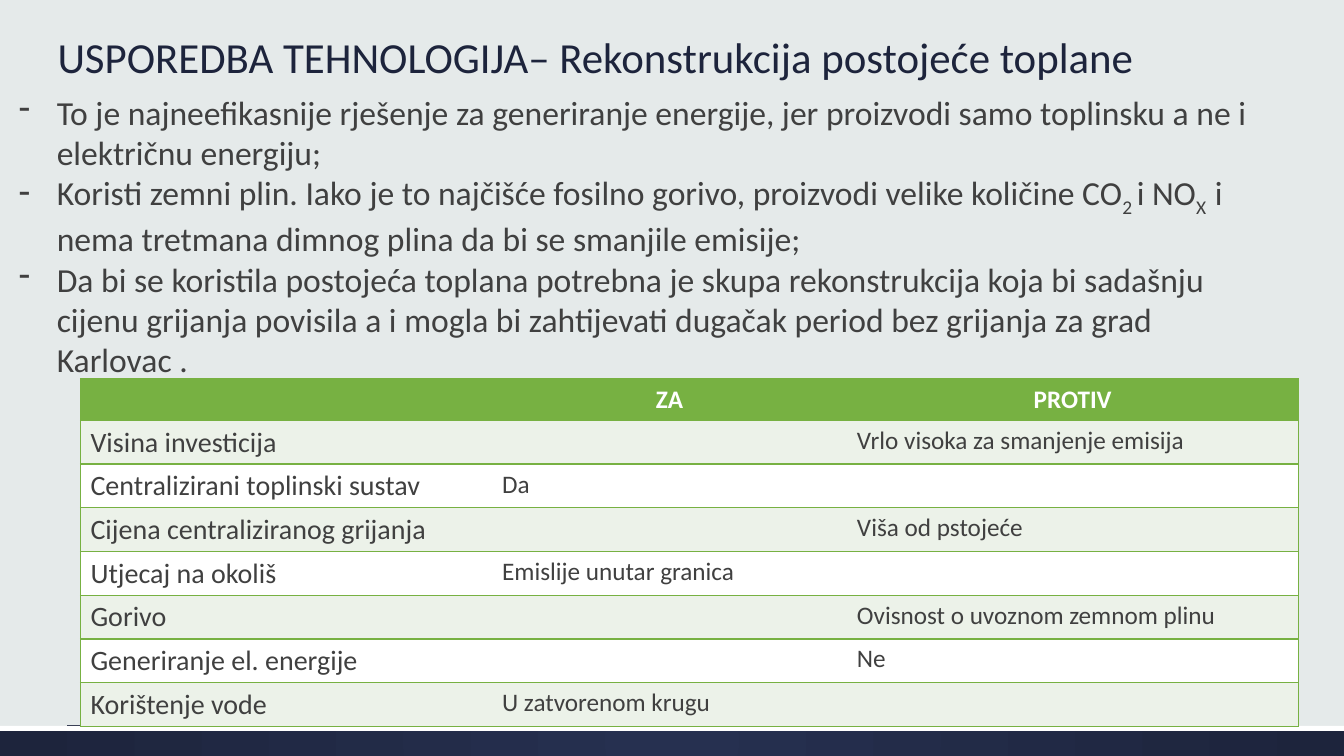
"""Build the slide on rebuilding the existing heating plant."""
from typing import NamedTuple

from lxml.etree import SubElement
from pptx import Presentation
from pptx.dml.color import RGBColor
from pptx.enum.shapes import MSO_SHAPE as Preset
from pptx.enum.text import MSO_ANCHOR as Anchor, PP_ALIGN as Align
from pptx.oxml.ns import qn
from pptx.util import Pt

FONT = "Calibri"
NAVY, INK, GREEN, WHITE = "1D243C", "404040", "77B142", "FFFFFF"
MIST, PALE, GLOW = "E5EAEA", "ECF2E9", "263050"
WIDTH, HEIGHT = 960, 540
COLUMNS = (294, 253.5, 322.5)
ROW_HEIGHT = 29.5


class Box(NamedTuple):
    left: float
    top: float
    width: float
    height: float

    def lengths(self) -> tuple:
        return tuple(Pt(value) for value in self)


class Piece(NamedTuple):
    text: str
    subscript: bool = False


class Criterion(NamedTuple):
    label: str
    pro: str = ""
    con: str = ""


TITLE = "USPOREDBA TEHNOLOGIJA– Rekonstrukcija postojeće toplane"
ARGUMENTS = (
    (Piece("To je najneefikasnije rješenje za generiranje energije, jer proizvodi "
           "samo toplinsku a ne i električnu energiju;"),),
    (Piece("Koristi zemni plin. Iako je to najčišće fosilno gorivo, proizvodi "
           "velike količine CO"),
     Piece("2 ", True), Piece("i NO"), Piece("X  ", True),
     Piece("i nema tretmana dimnog plina da bi se smanjile emisije;")),
    (Piece("Da bi se koristila postojeća toplana potrebna je skupa rekonstrukcija "
           "koja bi sadašnju cijenu grijanja povisila a i mogla bi zahtijevati "
           "dugačak period bez grijanja za grad Karlovac ."),),
)
CRITERIA = (
    Criterion("", "ZA", "PROTIV"),
    Criterion("Visina investicija", con="Vrlo visoka za smanjenje emisija"),
    Criterion("Centralizirani toplinski sustav", pro="Da"),
    Criterion("Cijena centraliziranog grijanja", con="Viša od pstojeće"),
    Criterion("Utjecaj na okoliš", pro="Emislije unutar granica"),
    Criterion("Gorivo", con="Ovisnost o uvoznom zemnom plinu"),
    Criterion("Generiranje el. energije", con="Ne"),
    Criterion("Korištenje vode", pro="U zatvorenom krugu"),
)


def colour(value: str) -> RGBColor:
    return RGBColor.from_string(value)


def style(paragraph, size: float, ink: str, bold: bool = False) -> None:
    font = paragraph.font
    font.name, font.size, font.bold = FONT, Pt(size), bold
    font.color.rgb = colour(ink)


def add_band(slide, box: Box):
    band = slide.shapes.add_shape(Preset.RECTANGLE, *box.lengths())
    band.shadow.inherit = False
    band.line.fill.background()
    return band


def add_footer(slide) -> None:
    footer = add_band(slide, Box(0, 518.4, WIDTH, 21.6))
    footer.fill.gradient()
    for stop, shade in zip(footer.fill.gradient_stops, (GLOW, NAVY)):
        stop.color.rgb = colour(shade)
    gradient = footer._element.spPr.find(qn("a:gradFill"))
    gradient.remove(gradient.find(qn("a:lin")))
    radial = SubElement(gradient, qn("a:path"), path="circle")
    SubElement(radial, qn("a:fillToRect"), dict.fromkeys("ltrb", "50000"))
    rule = add_band(slide, Box(0, 518.4, WIDTH, 3.6))
    rule.fill.solid()
    rule.fill.fore_color.rgb = colour(WHITE)


def add_frame(slide, box: Box):
    frame = slide.shapes.add_textbox(*box.lengths()).text_frame
    frame.word_wrap = True
    return frame


def add_title(slide) -> None:
    frame = add_frame(slide, Box(34, 9.5, 846.5, 53))
    frame.vertical_anchor = Anchor.BOTTOM
    heading = frame.paragraphs[0]
    heading.text = TITLE
    heading.line_spacing = 0.9
    style(heading, 30.6, NAVY)


def add_arguments(slide) -> None:
    frame = add_frame(slide, Box(6.5, 62, 920, 211))
    frame.margin_right = Pt(21)
    for index, pieces in enumerate(ARGUMENTS):
        argument = frame.add_paragraph() if index else frame.paragraphs[0]
        properties = argument._p.get_or_add_pPr()
        properties.set("marL", str(Pt(27)))
        properties.set("indent", str(-Pt(27)))
        SubElement(properties, qn("a:buChar"), char="-")
        style(argument, 24, INK)
        for piece in pieces:
            run = argument.add_run()
            run.text = piece.text
            if piece.subscript:
                run._r.get_or_add_rPr().set("baseline", "-25000")


def add_borders(cell, visible: str) -> None:
    properties = cell._tc.get_or_add_tcPr()
    for side in "LRTB":
        border = SubElement(properties, qn(f"a:ln{side}"), w=str(Pt(1)))
        if side in visible:
            fill = SubElement(border, qn("a:solidFill"))
            SubElement(fill, qn("a:srgbClr"), val=GREEN)
        else:
            SubElement(border, qn("a:noFill"))


def add_comparison(slide) -> None:
    box = Box(57.5, 270.7, sum(COLUMNS), ROW_HEIGHT * len(CRITERIA))
    table = slide.shapes.add_table(len(CRITERIA), len(COLUMNS), *box.lengths()).table
    for column, width in zip(table.columns, COLUMNS):
        column.width = Pt(width)
    for row, criterion in enumerate(CRITERIA):
        table.rows[row].height = Pt(ROW_HEIGHT)
        header = row == 0
        shade = GREEN if header else PALE if row % 2 else WHITE
        for column, (text, sides) in enumerate(zip(criterion, ("LTB", "TB", "RTB"))):
            cell = table.cell(row, column)
            add_borders(cell, sides)
            cell.fill.solid()
            cell.fill.fore_color.rgb = colour(shade)
            entry = cell.text_frame.paragraphs[0]
            entry.text = text
            entry.alignment = Align.CENTER if header else Align.LEFT
            size = 18 if header or column else 20
            style(entry, size, WHITE if header else INK, header)


def main() -> None:
    deck = Presentation()
    deck.slide_width, deck.slide_height = Pt(WIDTH), Pt(HEIGHT)
    slide = deck.slides.add_slide(deck.slide_layouts[6])
    slide.background.fill.solid()
    slide.background.fill.fore_color.rgb = colour(MIST)
    add_footer(slide)
    add_title(slide)
    add_arguments(slide)
    add_comparison(slide)
    deck.save("out.pptx")


if __name__ == "__main__":
    main()
